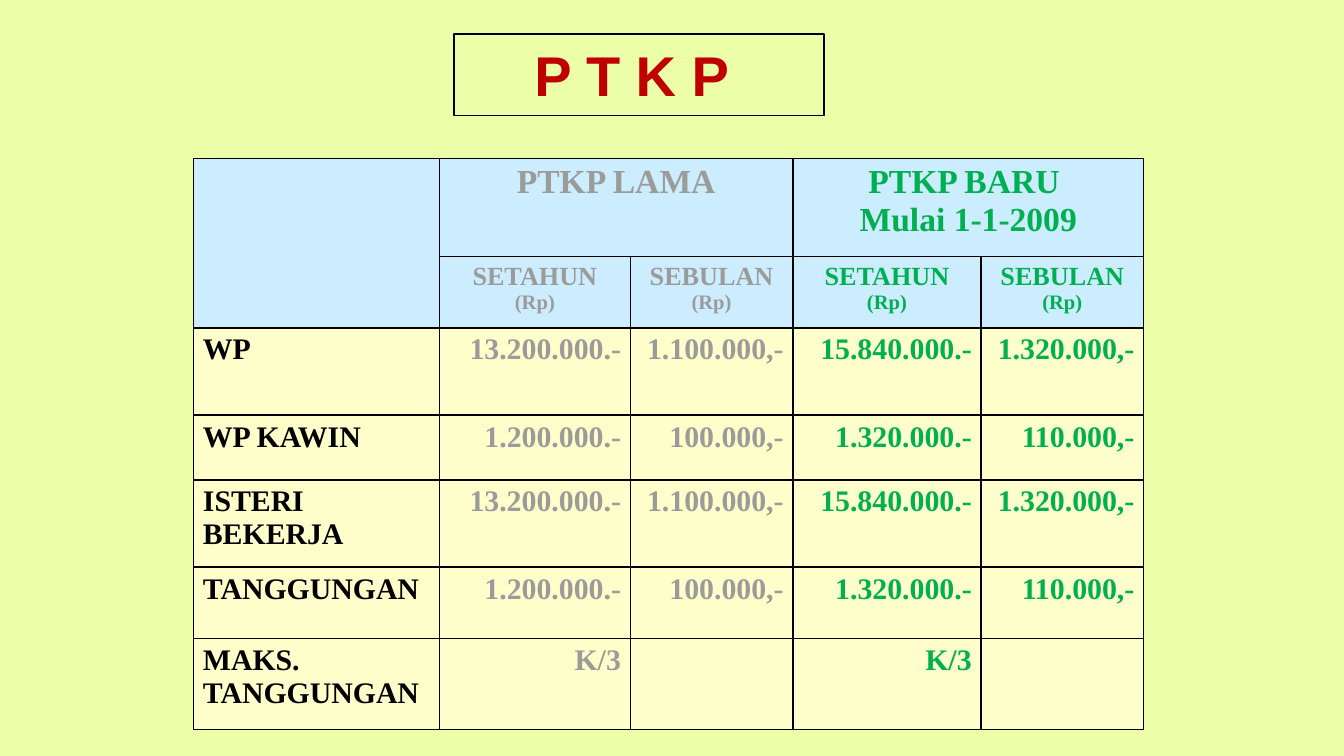
from lxml import etree
from pptx import Presentation
from pptx import util as u
from pptx.dml.color import RGBColor
from pptx.enum import text
from pptx.oxml import ns


def paint(target, color):
    target.solid()
    target.fore_color.rgb = RGBColor.from_string(color)


def add_border(cell, side, visible):
    line = etree.SubElement(cell._tc.get_or_add_tcPr(), ns.qn(f"a:ln{side}"), w=str(u.Pt(1)))
    fill = etree.SubElement(line, ns.qn("a:solidFill" if visible else "a:noFill"))
    if visible:
        etree.SubElement(fill, ns.qn("a:srgbClr"), val="000000")


presentation = Presentation()
presentation.slide_width = u.Inches(10)
presentation.slide_height = u.Inches(10 * 9 / 16)
slide = presentation.slides.add_slide(presentation.slide_layouts[5])
paint(slide.background.fill, "ECFFA8")

title = slide.shapes.title
title_box = {"left": 3.38, "top": 0.25, "width": 2.75, "height": 0.61}
for name, value in title_box.items():
    setattr(title, name, u.Inches(value))
paint(title.line.fill, "000000")
title.line.width = u.Pt(1)
title.text_frame.text = "P T K P "
title.text_frame.vertical_anchor = text.MSO_ANCHOR.MIDDLE
title.text_frame.auto_size = text.MSO_AUTO_SIZE.NONE
paragraph = title.text_frame.paragraphs[0]
paragraph.alignment = text.PP_ALIGN.CENTER
title_font = {"name": "Arial", "size": u.Pt(30), "bold": True}
for name, value in title_font.items():
    setattr(paragraph.runs[0].font, name, value)
paint(paragraph.runs[0].font.fill, "C00000")

column_widths = [1.83, 1.42, 1.21, 1.4, 1.21]
row_heights = [0.73, 0.53, 0.65, 0.48, 0.65, 0.53, 0.68]
column_colors = ["000000", "9B9B9A", "9B9B9A", "00B050", "00B050"]
yearly, monthly = "SETAHUN\n(Rp)", "SEBULAN\n(Rp)"
rows = [
    ["", "PTKP LAMA", "", "PTKP BARU \nMulai 1-1-2009", ""],
    ["", yearly, monthly, yearly, monthly],
    ["WP", "13.200.000.-", "1.100.000,-", "15.840.000.-", "1.320.000,-"],
    ["WP KAWIN", "1.200.000.-", "100.000,-", "1.320.000.-", "110.000,-"],
    ["ISTERI BEKERJA", "13.200.000.-", "1.100.000,-", "15.840.000.-", "1.320.000,-"],
    ["TANGGUNGAN", "1.200.000.-", "100.000,-", "1.320.000.-", "110.000,-"],
    ["MAKS. TANGGUNGAN", "K/3", "", "K/3", ""],
]

table = slide.shapes.add_table(
    len(rows), len(column_widths), u.Inches(1.44), u.Inches(1.18),
    u.Inches(sum(column_widths)), u.Inches(sum(row_heights)),
).table
for column, width in zip(table.columns, column_widths):
    column.width = u.Inches(width)
for row, height in zip(table.rows, row_heights):
    row.height = u.Inches(height)
for first in (1, 3):
    table.cell(0, first).merge(table.cell(0, first + 1))

margins = {"margin_left": 0.07, "margin_right": 0.07, "margin_top": 0.04, "margin_bottom": 0.04}
for row_index, values in enumerate(rows):
    is_header = row_index < 2
    for column_index, value in enumerate(values):
        cell = table.cell(row_index, column_index)
        for name, margin in margins.items():
            setattr(cell, name, u.Inches(margin))
        for side in "LRTB":
            add_border(cell, side, (row_index, column_index, side) not in ((0, 0, "B"), (1, 0, "T")))
        paint(cell.fill, "CCECFF" if is_header else "FFFFCC")
        if not value:
            continue
        cell.text = value
        for paragraph in cell.text_frame.paragraphs:
            if is_header:
                paragraph.alignment = text.PP_ALIGN.CENTER
            else:
                paragraph.alignment = text.PP_ALIGN.RIGHT if column_index else text.PP_ALIGN.LEFT
            run = paragraph.runs[0]
            size = 11 if run.text == "(Rp)" else (18, 14)[row_index] if is_header else 16
            run_font = {"name": "Times New Roman", "size": u.Pt(size), "bold": True}
            for name, setting in run_font.items():
                setattr(run.font, name, setting)
            paint(run.font.fill, column_colors[column_index])

presentation.save("out.pptx")
